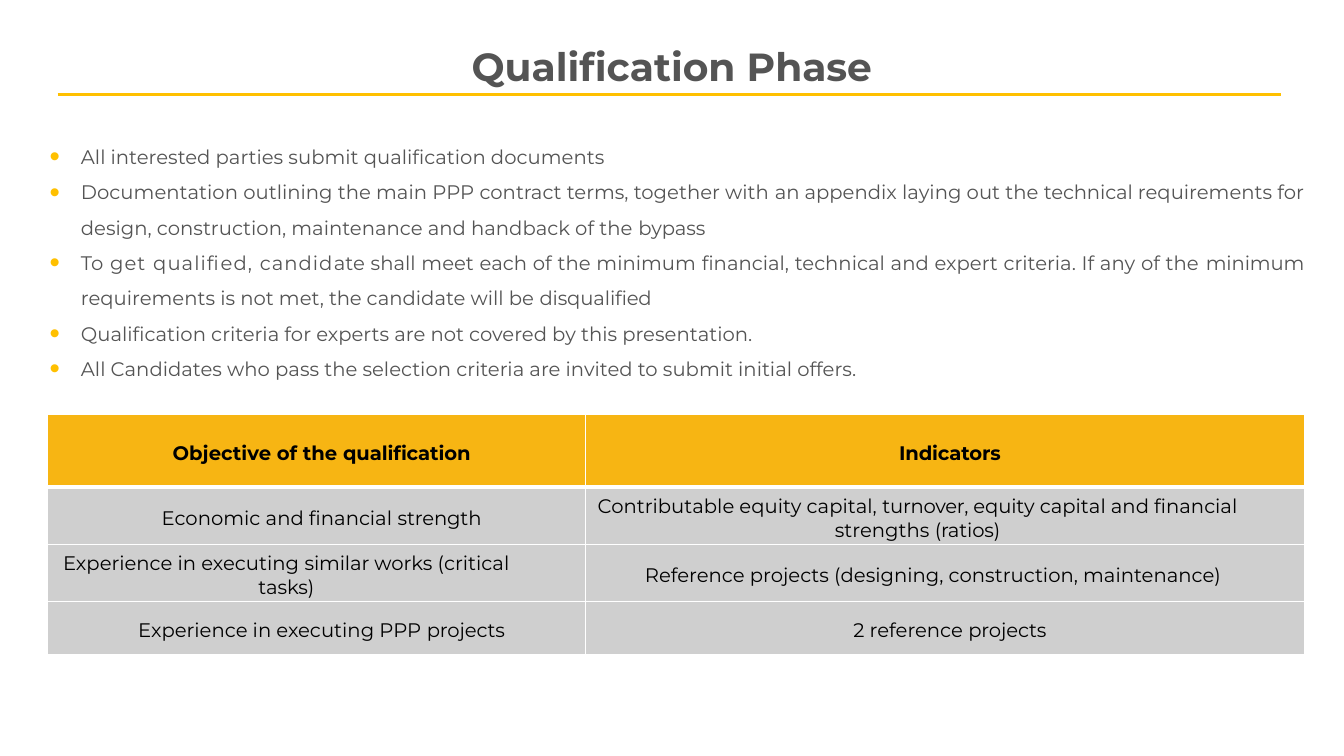
from lxml.etree import SubElement
from pptx import Presentation
from pptx.dml.color import RGBColor
from pptx.enum.shapes import MSO_CONNECTOR
from pptx.enum.text import MSO_ANCHOR, MSO_AUTO_SIZE, PP_ALIGN
from pptx.oxml import parse_xml
from pptx.oxml.ns import nsdecls, qn
from pptx.util import Cm, Pt

COLORS = {"gold": "FFC000", "header": "F7B513", "body": "CFCFCF",
          "text": "545454", "black": "000000", "white": "FFFFFF"}

# Each text is a list of runs: (text, letter spacing in points)
BULLETS = [
    [("All interested parties submit qualification documents", 0)],
    [("Documentation outlining the main PPP contract terms, together with", 0),
     (" an ", -0.2), ("appendix laying out the", 0), (" technical ", -0.1),
     ("requirements for design, construction, maintenance and handback of the ", 0),
     ("bypass", -0.1)],
    [("To", 0), (" get qualified, candid", 0.7),
     ("ate shall meet each of the minimum financial, technical and expert "
      "criteria. If any of the ", 0),
     ("minimum ", -0.1), ("requirements is not met,", 0), (" the ", -0.2),
     ("candidate will be ", 0), ("disqualified", -0.1)],
    [("Qualification criteria for experts are not covered by this presentation.", 0)],
    [("All Candidates who pass the selection criteria are invited to submit "
      "initial offers.", 0)],
]

# Each cell: (runs, right indent in cm)
ROWS = [
    [([("Objective of the ", 0), ("qualification", -0.1)], 0),
     ([("Indicators", -0.1)], 0)],
    [([("Economic and financial ", 0), ("strength", -0.1)], 0),
     ([("Contributable equity capital, ", 0), ("turnover, ", -0.2),
       ("equity ", -0.1), ("capital and financial strengths ", 0),
       ("(ratios)", -0.1)], 1.63)],
    [([("Experience in executing ", 0), ("similar ", -0.1),
       ("works (critical ", 0), ("tasks)", -0.1)], 1.78),
     ([("Reference projects (designing, construction, maintenance)", 0)], 0.84)],
    [([("Experience in executing PPP ", 0), ("projects", -0.1)], 0),
     ([("2 reference ", 0), ("projects", -0.1)], 0)],
]


def rgb(name):
    return RGBColor.from_string(COLORS[name])


def write(p, runs, size=14, color="text", bold=False, align=PP_ALIGN.CENTER):
    """Fill a paragraph with (text, letter spacing) runs in one format."""
    p.alignment = align
    for text, spacing in runs:
        r = p.add_run()
        r.text = text
        r.font.name = "Montserrat"
        r.font.size = Pt(size)
        r.font.bold = bold
        r.font.color.rgb = rgb(color)
        if spacing:
            r.font._element.set("spc", str(round(spacing * 100)))


def add_bullet(p):
    """Give a paragraph a hanging round bullet and its tab stop."""
    pPr = p._p.get_or_add_pPr()
    pPr.set("marL", str(Cm(0.84)))
    pPr.set("indent", str(-Cm(0.79)))
    bu_color = SubElement(pPr, qn("a:buClr"))
    SubElement(bu_color, qn("a:srgbClr"), val=COLORS["gold"])
    SubElement(pPr, qn("a:buSzPct"), val="150000")
    SubElement(pPr, qn("a:buFont"), typeface="Arial")
    SubElement(pPr, qn("a:buChar"), char="•")
    tabs = SubElement(pPr, qn("a:tabLst"))
    SubElement(tabs, qn("a:tab"), pos=str(Cm(0.48)), algn="l")


def set_borders(cell, top, bottom):
    """Draw white borders; top and bottom widths are in points."""
    tcPr = cell._tc.get_or_add_tcPr()
    sides = {"lnL": 1, "lnR": 1, "lnT": top, "lnB": bottom}
    for i, (side, width) in enumerate(sides.items()):
        tcPr.insert(i, parse_xml(
            f'<a:{side} {nsdecls("a")} w="{Pt(width)}"><a:solidFill>'
            f'<a:srgbClr val="{COLORS["white"]}"/></a:solidFill></a:{side}>'))


class SlideBuilder:
    def __init__(self, prs):
        self.s = prs.slides.add_slide(prs.slide_layouts[5])

    def title(self, text, left, top, width, height):
        sp = self.s.shapes.title
        sp.left, sp.top, sp.width, sp.height = map(Cm, (left, top, width, height))
        tf = sp.text_frame
        tf.word_wrap = True
        tf.vertical_anchor = MSO_ANCHOR.TOP
        tf.auto_size = MSO_AUTO_SIZE.SHAPE_TO_FIT_TEXT
        write(tf.paragraphs[0], [(text, 0)], size=28, bold=True)

    def rule(self, left, right, y):
        line = self.s.shapes.add_connector(
            MSO_CONNECTOR.STRAIGHT, Cm(left), Cm(y), Cm(right), Cm(y))
        line.line.color.rgb = rgb("gold")
        line.line.width = Pt(2)
        SubElement(line._element.spPr, qn("a:effectLst"))

    def bullets(self, items, left, top, width, height):
        sp = self.s.shapes.add_textbox(Cm(left), Cm(top), Cm(width), Cm(height))
        tf = sp.text_frame
        tf.word_wrap = True
        tf.auto_size = MSO_AUTO_SIZE.SHAPE_TO_FIT_TEXT
        tf.margin_left = tf.margin_right = tf.margin_bottom = 0
        tf.margin_top = Cm(0.13)
        for i, runs in enumerate(items):
            p = tf.add_paragraph() if i else tf.paragraphs[0]
            add_bullet(p)
            p.line_spacing = 1.5
            write(p, runs, align=PP_ALIGN.JUSTIFY)

    def table(self, rows, left, top, widths, heights):
        frame = self.s.shapes.add_table(
            len(rows), len(widths), Cm(left), Cm(top),
            Cm(sum(widths)), Cm(sum(heights)))
        table = frame.table
        for column, width in zip(table.columns, widths):
            column.width = Cm(width)
        for i, (cells, height) in enumerate(zip(rows, heights)):
            table.rows[i].height = Cm(height)
            for j, (runs, right_indent) in enumerate(cells):
                self.cell(table.cell(i, j), runs, right_indent, i)

    def cell(self, cell, runs, right_indent, row):
        cell.fill.solid()
        cell.fill.fore_color.rgb = rgb("body" if row else "header")
        set_borders(cell, 3 if row == 1 else 1, 1 if row else 3)
        cell.vertical_anchor = MSO_ANCHOR.MIDDLE
        cell.margin_left = cell.margin_right = cell.margin_bottom = 0
        cell.margin_top = Cm(0.13)
        p = cell.text_frame.paragraphs[0]
        pPr = p._p.get_or_add_pPr()
        pPr.set("marL", str(Cm(0.25)))
        pPr.set("marR", str(Cm(right_indent)))
        write(p, runs, color="black", bold=row == 0)


def main():
    prs = Presentation()
    prs.slide_width, prs.slide_height = Cm(33.87), Cm(19.05)
    slide = SlideBuilder(prs)
    slide.title("Qualification Phase", 1.88, 0.94, 30.1, 1.45)
    slide.rule(1.45, 32.28, 2.39)
    slide.bullets(BULLETS, 1.2, 3.23, 31.67, 6.3)
    slide.table(ROWS, 1.2, 10.45, [13.56, 18.11], [1.83, 1.44, 1.44, 1.34])
    prs.save("out.pptx")


if __name__ == "__main__":
    main()
